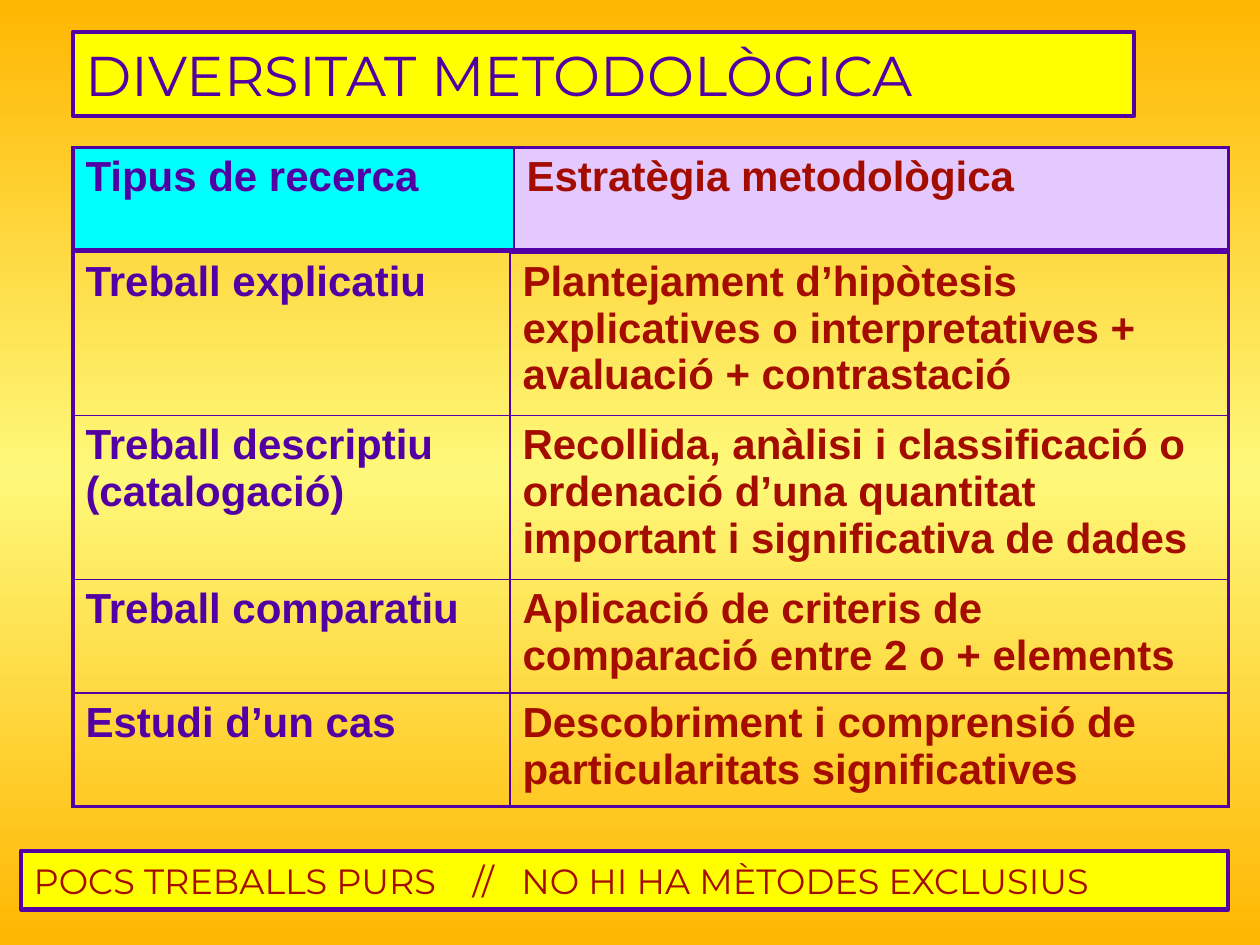
"""Build the slide on methodological diversity."""
from copy import deepcopy
from dataclasses import dataclass

from pptx import Presentation
from pptx.dml.color import RGBColor
from pptx.enum.shapes import MSO_SHAPE
from pptx.enum.text import MSO_ANCHOR, MSO_AUTO_SIZE, PP_ALIGN
from pptx.oxml.ns import qn
from pptx.oxml.xmlchemy import OxmlElement
from pptx.util import Cm, Pt

RECTANGLE = MSO_SHAPE.RECTANGLE
LEFT = PP_ALIGN.LEFT
MIDDLE = MSO_ANCHOR.MIDDLE
NO_AUTOFIT = MSO_AUTO_SIZE.NONE
TITLE_ONLY = 5


@dataclass(frozen=True)
class Theme:
    violet: str = "5200A4"
    red: str = "A40C00"
    yellow: str = "FFFF00"
    cyan: str = "00FFFF"
    lilac: str = "E4C9FF"
    gradient: tuple = ((0, "FFB601"), (0.5, "FEF87A"), (1, "FFB601"))
    display_font: str = "Montserrat"
    table_font: str = "Arial"
    title_size: float = 32
    table_size: float = 24
    footer_size: float = 20
    box_line: float = 2.5
    outer_border: float = 2.25
    inner_border: float = 1


def write_text(text_frame, text, *, font, size, color, bold=False):
    text_frame.word_wrap = True
    paragraph = text_frame.paragraphs[0]
    paragraph.alignment = LEFT
    run = paragraph.add_run()
    run.text = text
    run.font.name = font
    run.font.size = Pt(size)
    run.font.bold = bold
    run.font.color.rgb = RGBColor.from_string(color)
    return paragraph


def add_tab_stops(paragraph, positions):
    tab_list = OxmlElement("a:tabLst")
    for position in positions:
        tab = OxmlElement("a:tab")
        tab.set("pos", str(Cm(position)))
        tab.set("algn", "l")
        tab_list.append(tab)
    paragraph._p.get_or_add_pPr().append(tab_list)


def add_border(cell, side, width, color):
    line = OxmlElement(f"a:ln{side}")
    line.set("w", str(Pt(width)))
    fill = OxmlElement("a:solidFill")
    rgb = OxmlElement("a:srgbClr")
    rgb.set("val", color)
    fill.append(rgb)
    line.append(fill)
    cell._tc.get_or_add_tcPr().append(line)


class SlideBuilder:
    def __init__(self, presentation, theme):
        self.theme = theme
        self.slide = presentation.slides.add_slide(presentation.slide_layouts[TITLE_ONLY])

    def background(self):
        fill = self.slide.background.fill
        fill.gradient()
        fill.gradient_angle = 270
        stop_list = next(self.slide.element.iter(qn("a:gsLst")))
        stop_list.append(deepcopy(stop_list[0]))
        for stop, (position, color) in zip(fill.gradient_stops, self.theme.gradient):
            stop.position = position
            stop.color.rgb = RGBColor.from_string(color)

    def style_box(self, shape, text, **text_format):
        theme = self.theme
        shape.fill.solid()
        shape.fill.fore_color.rgb = RGBColor.from_string(theme.yellow)
        shape.line.color.rgb = RGBColor.from_string(theme.violet)
        shape.line.width = Pt(theme.box_line)
        shape.text_frame.auto_size = NO_AUTOFIT
        shape.text_frame.vertical_anchor = MIDDLE
        return write_text(shape.text_frame, text, font=theme.display_font, **text_format)

    def title(self, text, left, top, width, height):
        shape = self.slide.shapes.title
        shape.left, shape.top, shape.width, shape.height = map(Cm, (left, top, width, height))
        self.style_box(shape, text, size=self.theme.title_size, color=self.theme.violet)

    def footer(self, text, left, top, width, height, tab_stops):
        shape = self.slide.shapes.add_shape(RECTANGLE, *map(Cm, (left, top, width, height)))
        shape.shadow.inherit = False
        paragraph = self.style_box(shape, text, size=self.theme.footer_size, color=self.theme.red)
        add_tab_stops(paragraph, tab_stops)

    def table(self, rows, left, top, column_widths, row_heights, fills=None, top_borders=None):
        theme = self.theme
        outer, inner = theme.outer_border, theme.inner_border
        last_row, last_column = len(rows) - 1, len(column_widths) - 1
        top_borders = top_borders or [outer] * len(column_widths)
        frame = self.slide.shapes.add_table(
            len(rows), len(column_widths), Cm(left), Cm(top),
            Cm(sum(column_widths)), Cm(sum(row_heights)))
        table = frame.table
        table.first_row = table.horz_banding = False
        for column, width in zip(table.columns, column_widths):
            column.width = Cm(width)
        for row, height in zip(table.rows, row_heights):
            row.height = Cm(height)
        for r, texts in enumerate(rows):
            for c, text in enumerate(texts):
                cell = table.cell(r, c)
                write_text(cell.text_frame, text, font=theme.table_font, size=theme.table_size,
                           color=(theme.violet, theme.red)[c], bold=True)
                borders = {
                    "L": inner if c else outer,
                    "R": outer if c == last_column else inner,
                    "T": inner if r else top_borders[c],
                    "B": outer if r == last_row else inner,
                }
                for side, width in borders.items():
                    add_border(cell, side, width, theme.violet)
                if fills:
                    cell.fill.solid()
                    cell.fill.fore_color.rgb = RGBColor.from_string(fills[c])
                else:
                    cell.fill.background()


def main():
    presentation = Presentation()
    presentation.slide_width, presentation.slide_height = Cm(25.4), Cm(19.05)
    theme = Theme()
    builder = SlideBuilder(presentation, theme)
    builder.background()
    builder.title("DIVERSITAT METODOLÒGICA", 1.47, 0.64, 21.39, 1.7)
    builder.table(
        [
            ("Treball explicatiu",
             "Plantejament d’hipòtesis explicatives o interpretatives + avaluació + contrastació"),
            ("Treball descriptiu (catalogació)",
             "Recollida, anàlisi i classificació o ordenació d’una quantitat "
             "important i significativa de dades"),
            ("Treball comparatiu", "Aplicació de criteris de comparació entre 2 o + elements"),
            ("Estudi d’un cas", "Descobriment i comprensió de particularitats significatives"),
        ],
        1.47, 5.08, (8.81, 14.48), (3.3, 3.3, 2.29, 2.29),
        top_borders=(theme.inner_border, theme.outer_border))
    builder.table([("Tipus de recerca", "Estratègia metodològica")],
                  1.47, 2.97, (8.89, 14.4), (2.06,), fills=(theme.cyan, theme.lilac))
    builder.footer("POCS TREBALLS PURS\t//\tNO HI HA MÈTODES EXCLUSIUS",
                   0.43, 17.15, 24.33, 1.19, tab_stops=(8.85, 9.83))
    presentation.save("out.pptx")


if __name__ == "__main__":
    main()
